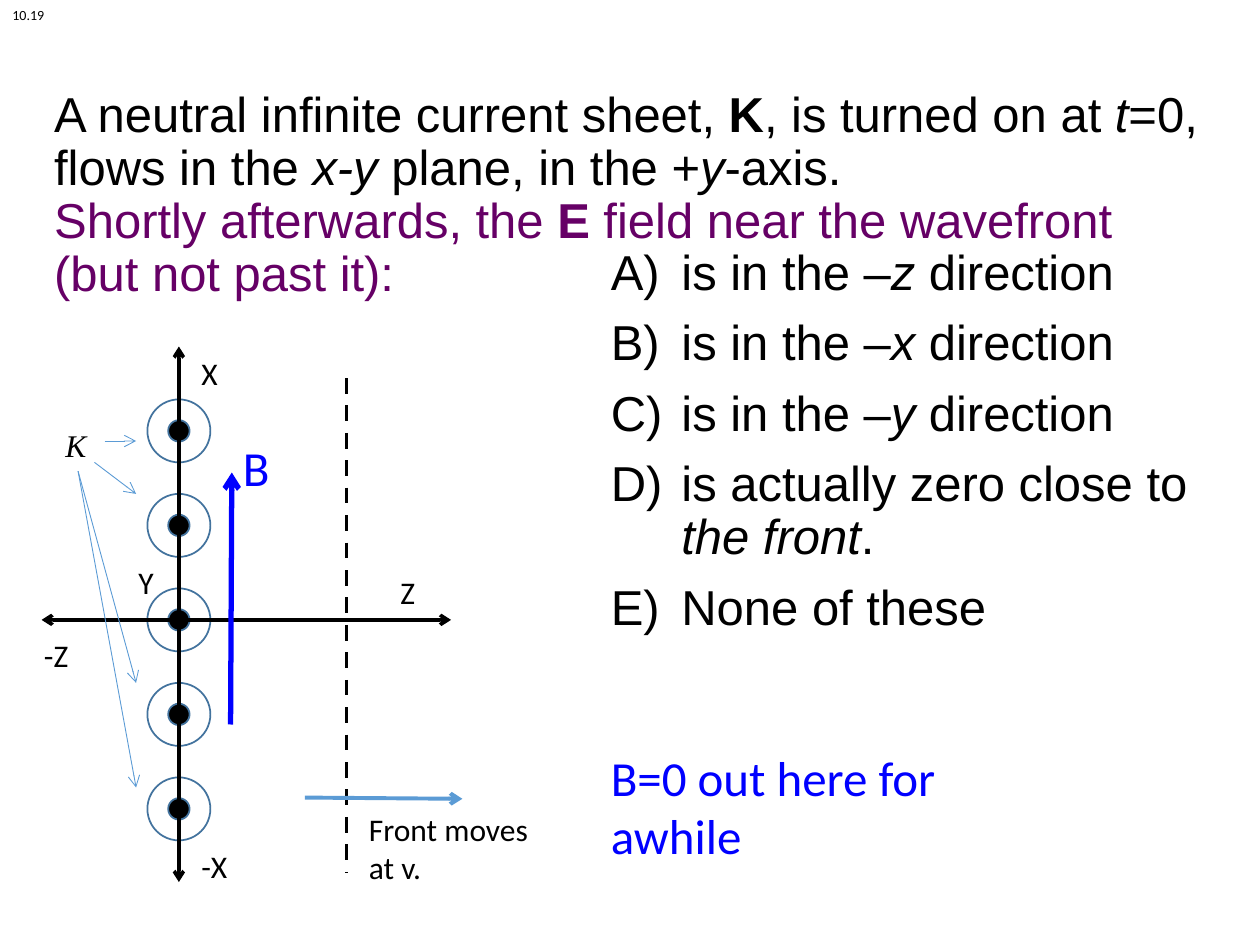
import pptx
import pptx.util
import pptx.dml.color
import pptx.enum.dml
import pptx.enum.shapes
import pptx.enum.text
import pptx.oxml.ns
from lxml import etree

Inches = pptx.util.Inches
Pt = pptx.util.Pt
Anchor = pptx.enum.text.MSO_ANCHOR
Fit = pptx.enum.text.MSO_AUTO_SIZE
Align = pptx.enum.text.PP_ALIGN

COLORS = {"ink": "000000", "plum": "660066", "field": "0000FF",
          "sky": "5B9BD5", "ring": "43739E"}

# Each run is (text, marks): b for bold, i for italic.
SETUP = [("A neutral infinite current sheet, ", ""), ("K", "b"),
         (", is turned on at ", ""), ("t", "i"), ("=0, flows in the ", ""),
         ("x-y", "i"), (" plane, in the +", ""), ("y", "i"), ("-axis. ", "")]
ASK = [("Shortly afterwards, the ", ""), ("E", "b"),
       (" field near the wavefront (but not past it):", "")]
CHOICES = [[("is in the –", ""), (axis, "i"), (" direction", "")] for axis in "zxy"]
CHOICES += [[("is actually zero close to ", ""), ("the front", "i"), (".", "")],
            [("None of these", "")]]

LABELS = [  # text, box, format
    ("X", (1.5, 2.76, 0.42, 0.4), {}),
    ("Z", (3.08, 4.5, 0.42, 0.4), {}),
    ("Y", (1, 4.42, 0.42, 0.4), {}),
    ("-Z", (0.25, 5, 0.58, 0.4), {}),
    ("-X", (1.5, 6.67, 0.5, 0.4), {}),
    ("K", (0.42, 3.33, 0.42, 0.4), {"face": "Times New Roman", "marks": "i"}),
    ("B", (1.83, 3.42, 1.25, 0.57), {"size": 28, "color": "field"}),
    ("B=0 out here for awhile", (4.75, 5.88, 3, 1.04), {"size": 28, "color": "field"}),
    ("Front moves at v.", (2.83, 6.38, 1.58, 0.71), {}),
    ("10.19", (0, 0, 0.46, 0.24), {"size": 8, "wrap": False}),
]

LINES = [  # start, end, color, width, format
    ((1.42, 7), (1.42, 2.75), "ink", 2, {"ends": ("headEnd", "tailEnd")}),
    ((0.33, 4.92), (3.58, 4.92), "ink", 2, {"ends": ("headEnd", "tailEnd")}),
    ((0.83, 3.5), (1.08, 3.5), "sky", 0.5, {}),
    ((0.75, 3.67), (1.08, 3.92), "sky", 0.5, {}),
    ((0.62, 3.74), (1.08, 5.42), "sky", 0.5, {}),
    ((0.62, 3.74), (1.08, 6.25), "sky", 0.5, {}),
    ((1.83, 5.75), (1.84, 3.75), "field", 3, {}),
    ((2.75, 3), (2.75, 6.92), "ink", 2.25, {"ends": (), "dash": True}),
    ((2.42, 6.33), (3.67, 6.34), "sky", 2.25, {}),
]


def rgb(name):
    return pptx.dml.color.RGBColor.from_string(COLORS[name])


def put(item, values):
    for name, value in values.items():
        setattr(item, name, value)


def child(parent, tag, **attrs):
    return etree.SubElement(parent, pptx.oxml.ns.qn(tag), attrs)


def inch(box):
    return [Inches(n) for n in box]


def write(para, runs, size=28, face="Arial", color="ink"):
    for text, marks in runs:
        run = para.add_run()
        put(run, {"text": text})
        put(run.font, {"size": Pt(size), "name": face,
                       "bold": "b" in marks, "italic": "i" in marks})
        run.font.color.rgb = rgb(color)


def add_title(slide):
    title = slide.shapes.title
    put(title, dict(zip(("left", "top", "width", "height"),
                        inch((0.33, 0.03, 9.33, 2.42)))))
    put(title.text_frame, {"vertical_anchor": Anchor.BOTTOM,
                           "auto_size": Fit.NONE, "word_wrap": True})
    para = title.text_frame.paragraphs[0]
    put(para, {"alignment": Align.LEFT, "line_spacing": 0.9})
    write(para, SETUP)
    para.add_line_break()
    write(para, ASK, color="plum")


def add_choices(slide):
    frame = slide.shapes.add_textbox(*inch((4.75, 1.92, 5.17, 4))).text_frame
    frame.word_wrap = True
    indent = Inches(0.56)
    for n, runs in enumerate(CHOICES):
        para = frame.add_paragraph() if n else frame.paragraphs[0]
        put(para, {"line_spacing": 0.9, "space_before": Pt(10)})
        props = para._p.get_or_add_pPr()
        props.set("marL", str(indent))
        props.set("indent", str(-indent))
        child(props, "a:buFont", typeface="Arial")
        child(props, "a:buAutoNum", type="alphaUcParenR")
        write(para, runs)


def add_label(slide, text, box, size=18, face="Calibri", color="ink",
              marks="", wrap=True):
    frame = slide.shapes.add_textbox(*inch(box)).text_frame
    put(frame, {"word_wrap": wrap, "auto_size": Fit.SHAPE_TO_FIT_TEXT})
    write(frame.paragraphs[0], [(text, marks)], size, face, color)


def add_disc(slide, x, y, size, fill=None):
    """Draw a circle centred on x, y."""
    disc = slide.shapes.add_shape(pptx.enum.shapes.MSO_SHAPE.OVAL,
                                  *inch((x - size / 2, y - size / 2, size, size)))
    disc.shadow.inherit = False
    if fill:
        disc.fill.solid()
        disc.fill.fore_color.rgb = rgb(fill)
    else:
        disc.fill.background()
    disc.line.width = Pt(1)
    disc.line.color.rgb = rgb("ring")


def add_line(slide, start, end, color, width, ends=("tailEnd",), dash=False):
    link = slide.shapes.add_connector(pptx.enum.shapes.MSO_CONNECTOR.STRAIGHT,
                                      *inch(start + end))
    link.line.width = Pt(width)
    link.line.color.rgb = rgb(color)
    if dash:
        link.line.dash_style = pptx.enum.dml.MSO_LINE.DASH
    for tag in ends:
        child(link.line._get_or_add_ln(), "a:" + tag, type="arrow")
    child(link._element.spPr, "a:effectLst")


def main():
    deck = pptx.Presentation()
    put(deck, {"slide_width": Inches(10), "slide_height": Inches(7.5)})
    slide = deck.slides.add_slide(deck.slide_layouts[5])
    add_title(slide)
    add_choices(slide)
    for row in range(5):
        y = 3.42 + 0.75 * row
        add_disc(slide, 1.42, y, 0.17, "ink")
        add_disc(slide, 1.42, y, 0.5)
    for start, end, color, width, style in LINES:
        add_line(slide, start, end, color, width, **style)
    for text, box, style in LABELS:
        add_label(slide, text, box, **style)
    deck.save("out.pptx")


if __name__ == "__main__":
    main()
